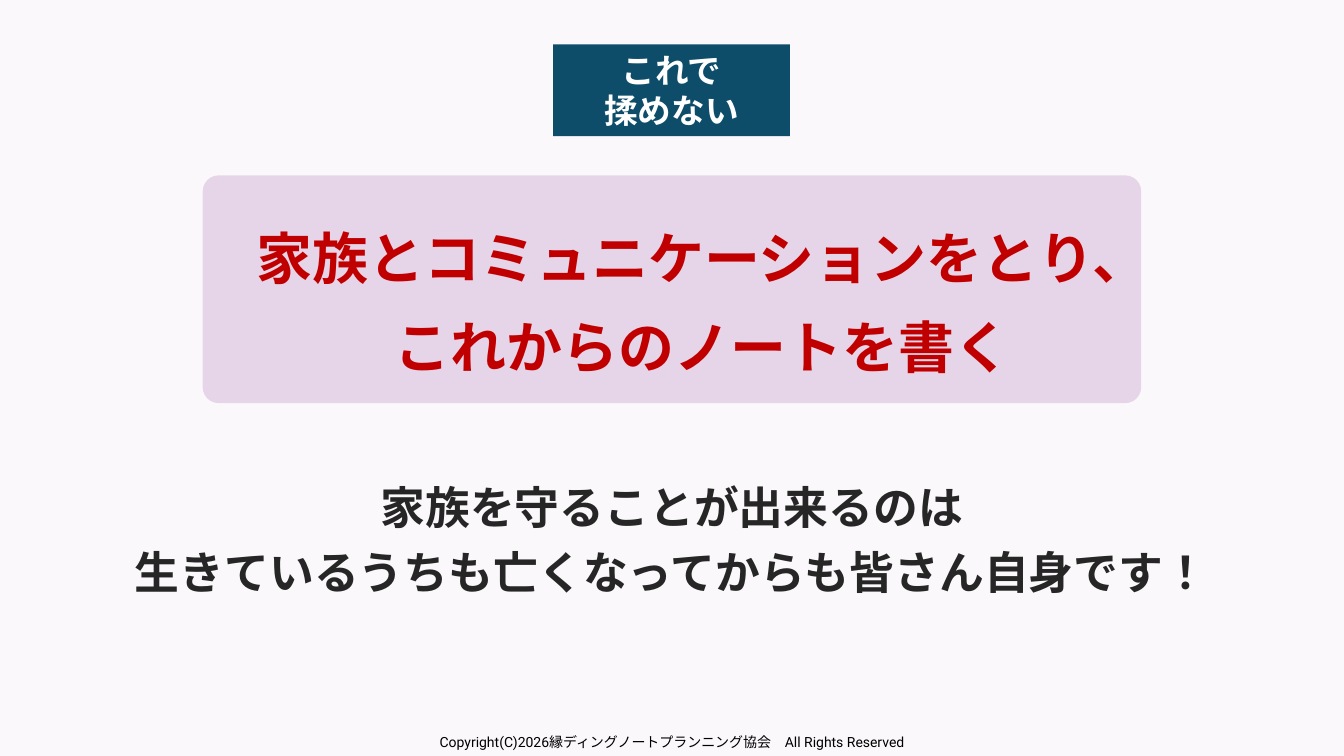
from lxml.etree import SubElement
from pptx import Presentation
from pptx.dml.color import RGBColor
from pptx.enum.lang import MSO_LANGUAGE_ID as Language
from pptx.enum.shapes import MSO_SHAPE as Preset
from pptx.enum.text import MSO_ANCHOR as Anchor, PP_ALIGN as Align
from pptx.oxml.ns import qn
from pptx.util import Cm, Pt

JAPANESE = "Noto Sans CJK JP"
WIDTH = 33.87


def paint(color_format, color):
    color_format.rgb = RGBColor.from_string(color)


def write(shape, text, size, color, bold=True, latin=JAPANESE, spacing=None, anchor=Anchor.MIDDLE):
    frame = shape.text_frame
    frame.word_wrap = True
    frame.vertical_anchor = anchor
    frame.text = text
    for para in frame.paragraphs:
        para.alignment = Align.CENTER
        if spacing:
            para.line_spacing = Pt(spacing)
        for span in para.runs:
            span.font.size = Pt(size)
            span.font.bold = bold
            span.font.name = latin
            span.font.language_id = Language.JAPANESE
            paint(span.font.color, color)
            SubElement(span.font._element, qn("a:ea"), typeface=JAPANESE)


def add_block(shapes, preset, left, top, width, height, color):
    block = shapes.add_shape(preset, Cm(left), Cm(top), Cm(width), Cm(height))
    block.shadow.inherit = False
    block.fill.solid()
    paint(block.fill.fore_color, color)
    block.line.fill.background()
    return block


def add_text(shapes, left, top, width, height, text, size, color, **style):
    box = shapes.add_textbox(Cm(left), Cm(top), Cm(width), Cm(height))
    box.text_frame.margin_left = box.text_frame.margin_right = 0
    write(box, text, size, color, **style)


def add_message_panel(page):
    group = page.shapes.add_group_shape()
    panel = add_block(group.shapes, Preset.ROUNDED_RECTANGLE, 5.11, 4.42, 23.65, 5.74, "D9BEDC")
    panel.adjustments[0] = 0.07
    tint = panel._element.spPr.find(qn("a:solidFill"))[0]
    SubElement(tint, qn("a:alpha"), val="60000")
    add_text(group.shapes, 6.2, 4.75, 23.01, 5.13,
             "家族とコミュニケーションをとり、\vこれからのノートを書く",
             40, "C00000", spacing=64)


def main():
    deck = Presentation()
    deck.slide_width, deck.slide_height = Cm(WIDTH), Cm(19.05)
    page = deck.slides.add_slide(deck.slide_layouts[6])
    page.background.fill.solid()
    paint(page.background.fill.fore_color, "FBF8FB")

    add_message_panel(page)
    add_text(page.shapes, 0, 11.61, WIDTH, 3.68,
             "家族を守ることが出来るのは\v生きているうちも亡くなってからも皆さん自身です！",
             32, "262626", spacing=46)
    label = add_block(page.shapes, Preset.RECTANGLE, 13.94, 1.12, 5.97, 2.31, "0D4D69")
    write(label, "これで\n揉めない", 24, "FFFFFF")
    add_text(page.shapes, 0, 18.36, WIDTH, 1.02,
             "Copyright(C)2026縁ディングノートプランニング協会　All Rights Reserved",
             10, "000000", bold=False, latin="Roboto", anchor=Anchor.TOP)
    deck.save("out.pptx")


if __name__ == "__main__":
    main()
